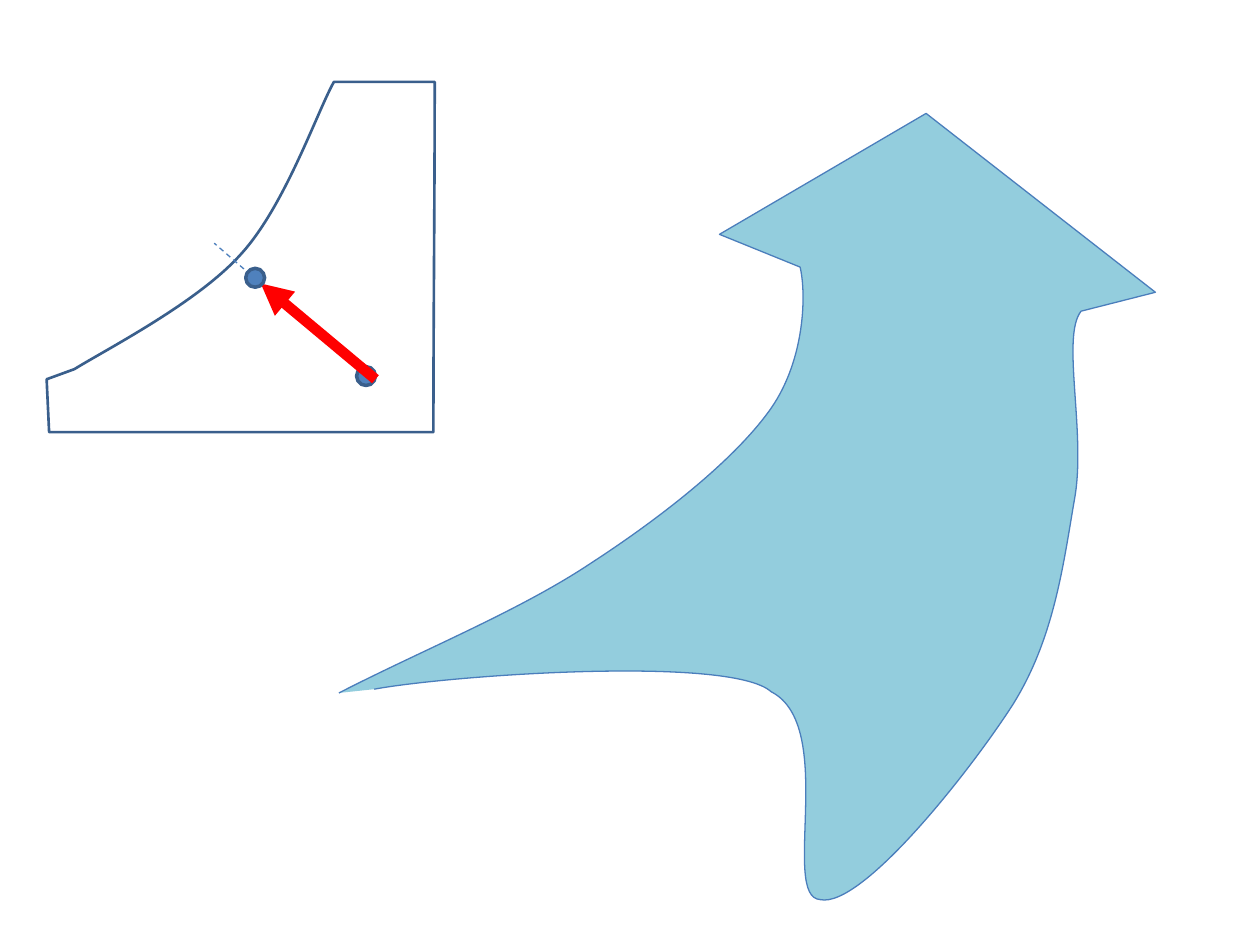
from pptx import Presentation
from pptx.dml.color import RGBColor
from pptx.enum.dml import MSO_LINE
from pptx.enum.shapes import MSO_CONNECTOR, MSO_SHAPE
from pptx.oxml.ns import qn
from pptx.util import Pt
from lxml.etree import SubElement

SCALE = 9144  # EMU per px, 100 px to the inch
WIDTH, HEIGHT = 1000, 750

SKY = RGBColor(0x93, 0xCD, 0xDD)
BLUE = RGBColor(0x4F, 0x81, 0xBD)
EDGE = RGBColor(0x4B, 0x7E, 0xBC)
NAVY = RGBColor(0x3A, 0x5F, 0x8C)
RED = RGBColor(0xFF, 0x00, 0x00)

# Outlines: a start point, then one tuple per segment.
# One point makes a straight side, three points make a Bezier curve.
ARROW = [
    (269, 550),
    ((335, 516), (412, 485), (469, 447)),
    ((526, 410), (584, 364), (612, 324)),
    ((639, 285), (640, 233), (635, 212)),
    ((571, 186),),
    ((735, 90),),
    ((917, 232),),
    ((858, 247),),
    ((842, 267), (862, 343), (853, 395)),
    ((844, 447), (837, 506), (804, 559)),
    ((770, 612), (684, 721), (651, 714)),
    ((619, 712), (665, 576), (612, 549)),
    ((580, 520), (356, 536), (297, 547)),
]
BLOCK = [
    (39, 343),
    ((344, 343),),
    ((344, 251), (345, 158), (345, 65)),
    ((265, 65),),
    ((252, 88), (226, 164), (191, 202)),
    ((157, 240), (85, 277), (59, 293)),
    ((37, 301),),
    ((39, 343),),
]
DOT = 15
LOW_DOT = (283, 291)
TOP_DOT = (195, 213)
AXIS = ((291, 298), (170, 193))
FORCE = ((298, 301), (207, 225))


def px(n):
    return n * SCALE


def style(shape, fill, edge, width):
    shape.shadow.inherit = False
    if fill is None:
        shape.fill.background()
    else:
        shape.fill.solid()
        shape.fill.fore_color.rgb = fill
    shape.line.color.rgb = edge
    shape.line.width = Pt(width)


def outline(shapes, points, fill, edge, width, close=False):
    start, *parts = points
    pen = shapes.build_freeform(*start, scale=SCALE)
    pen.add_line_segments([p for part in parts for p in part], close=close)
    shape = pen.convert_to_shape()
    # Join each run of three control points into one curve
    sides = iter(list(shape.element.iter(qn("a:lnTo"))))
    for part in parts:
        group = [next(sides) for _ in part]
        if len(group) == 3:
            curve = group[0].makeelement(qn("a:cubicBezTo"))
            group[0].addprevious(curve)
            for side in group:
                curve.append(side[0])
                side.getparent().remove(side)
    style(shape, fill, edge, width)


def dot(shapes, spot):
    shape = shapes.add_shape(MSO_SHAPE.OVAL, *map(px, (*spot, DOT, DOT)))
    style(shape, BLUE, NAVY, 2)


def line(shapes, ends, color, width):
    start, end = ends
    link = shapes.add_connector(MSO_CONNECTOR.STRAIGHT, *map(px, start + end))
    link.line.color.rgb = color
    link.line.width = Pt(width)
    SubElement(link.element.spPr, qn("a:effectLst"))
    return link


def main():
    deck = Presentation()
    deck.slide_width, deck.slide_height = px(WIDTH), px(HEIGHT)
    shapes = deck.slides.add_slide(deck.slide_layouts[6]).shapes

    # Large curved arrow and the block with a curved face
    outline(shapes, ARROW, SKY, EDGE, 0.75)
    outline(shapes, BLOCK, None, NAVY, 1.5, close=True)

    # Two points, the dashed axis and the red force arrow
    dot(shapes, LOW_DOT)
    axis = line(shapes, AXIS, EDGE, 0.75)
    axis.line.dash_style = MSO_LINE.DASH
    force = line(shapes, FORCE, RED, 6)
    stroke = force.element.spPr.find(qn("a:ln"))
    SubElement(stroke, qn("a:tailEnd"), type="triangle")
    dot(shapes, TOP_DOT)

    deck.save("out.pptx")


if __name__ == "__main__":
    main()
